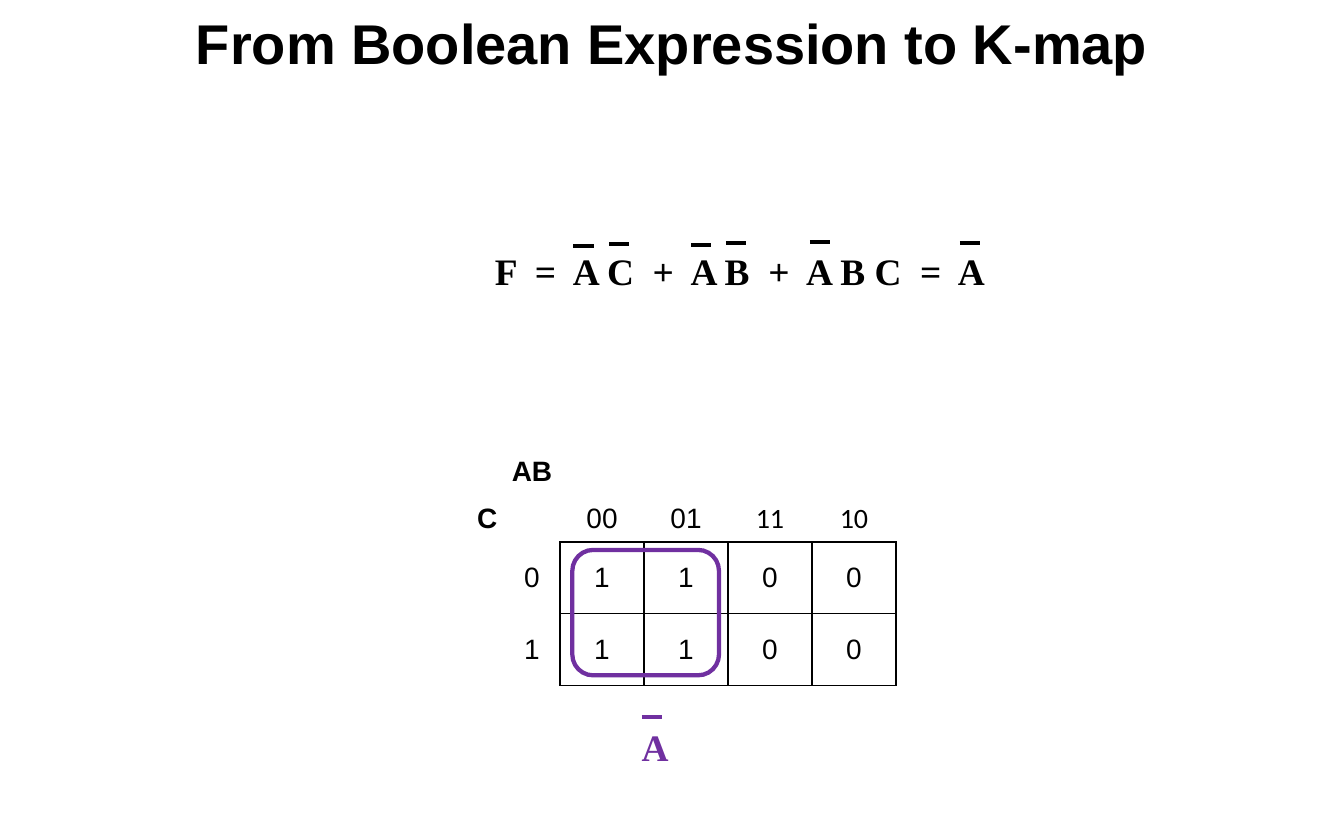
import lxml.etree
import pptx
import pptx.dml.color
import pptx.enum.shapes
import pptx.enum.text
import pptx.oxml
import pptx.oxml.ns
import pptx.util

Inches, Pt = pptx.util.Inches, pptx.util.Pt
RGB = pptx.dml.color.RGBColor.from_string
ALIGN, ANCHOR = pptx.enum.text.PP_ALIGN, pptx.enum.text.MSO_ANCHOR
COLORS = {"ink": "000000", "paper": "FFFFFF", "loop": "7030A0"}
qn = pptx.oxml.ns.qn


def write(frame, text, size, font="Arial", color="ink", bold=False, align=ALIGN.CENTER):
    para = frame.paragraphs[0]
    para.alignment = align
    run = para.add_run()
    run.text = text
    run.font.size, run.font.name, run.font.bold = Pt(size), font, bold
    run.font.color.rgb = RGB(COLORS[color])


def bar(shapes, left, top, color="ink"):
    """Draw the overline that negates a letter."""
    line = shapes.add_connector(
        pptx.enum.shapes.MSO_CONNECTOR.STRAIGHT,
        Inches(left), Inches(top), Inches(left + 0.18), Inches(top))
    line.line.color.rgb = RGB(COLORS[color])
    line.line.width = Pt(2.5)
    lxml.etree.SubElement(line._element.spPr, qn("a:effectLst"))


deck = pptx.Presentation()
deck.slide_width, deck.slide_height = Inches(12), Inches(7.5)
slide = deck.slides.add_slide(deck.slide_layouts[6])

# Title
title = slide.shapes.add_textbox(Inches(1), 0, Inches(10), Inches(0.75)).text_frame
title.word_wrap = True
title.vertical_anchor = ANCHOR.MIDDLE
write(title, "From Boolean Expression to K-map", 36, bold=True)

# Karnaugh map: two rows and two columns of labels around the values
GRID = [
    ["", "AB", "", "", "", ""],
    ["C", "", "00", "01", "11", "10"],
    ["", "0", "1", "1", "0", "0"],
    ["", "1", "1", "1", "0", "0"],
]
WIDTHS = [0.5] * 2 + [0.75] * 4
HEIGHTS = [0.42] * 2 + [0.64] * 2
HEAD = 2
frame = slide.shapes.add_table(
    len(HEIGHTS), len(WIDTHS), Inches(4), Inches(4),
    Inches(sum(WIDTHS)), Inches(sum(HEIGHTS)))
table = frame.table
table.first_row = table.horz_banding = False
for col, width in zip(table.columns, WIDTHS):
    col.width = Inches(width)
for row, height in zip(table.rows, HEIGHTS):
    row.height = Inches(height)

SIDES = {"L": (0, -1), "R": (0, 1), "T": (-1, 0), "B": (1, 0)}
for r, texts in enumerate(GRID):
    for c, text in enumerate(texts):
        cell = table.cell(r, c)
        cell.margin_left = cell.margin_right = cell.margin_top = cell.margin_bottom = 0
        cell.vertical_anchor = ANCHOR.MIDDLE
        props = cell._tc.get_or_add_tcPr()
        for side, (down, right) in SIDES.items():
            # An edge is black when a value cell lies on either side of it
            inked = min(r, c) >= HEAD or min(r + down, c + right) >= HEAD
            edge = lxml.etree.SubElement(props, qn(f"a:ln{side}"), w=str(Pt(1)))
            fill = lxml.etree.SubElement(edge, qn("a:solidFill"))
            lxml.etree.SubElement(fill, qn("a:srgbClr"),
                                  val=COLORS["ink" if inked else "paper"])
        cell.fill.solid()
        cell.fill.fore_color.rgb = RGB(COLORS["paper"])
        if text:
            font = "Calibri" if text in ("11", "10") else "Arial"
            write(cell.text_frame, text, 18, font, bold=text.isalpha())
table.cell(1, 0).margin_left = Inches(0.2)

# Expression and the term it reduces to, each with its overlines
TERMS = [
    ("F  =  A C  +  A B  +  A B C  =  A", "ink", (4.32, 2.17, 4.62),
     [(5.12, 2.2), (5.44, 2.18), (6.17, 2.19), (6.48, 2.17), (7.23, 2.16), (8.57, 2.17)]),
    ("A", "loop", (5.63, 6.42, 0.45), [(5.73, 6.4)]),
]
for text, color, (left, top, width), bars in TERMS:
    group = slide.shapes.add_group_shape().shapes
    box = group.add_textbox(Inches(left), Inches(top), Inches(width), Inches(0.5))
    box.text_frame.word_wrap = False
    write(box.text_frame, text, 24, "Times New Roman", color, True, ALIGN.LEFT)
    for x, y in bars:
        bar(group, x, y, color)

# Loop around the four ones
loop = slide.shapes.add_shape(
    pptx.enum.shapes.MSO_SHAPE.ROUNDED_RECTANGLE,
    Inches(5.11), Inches(4.91), Inches(1.31), Inches(1.12))
loop.shadow.inherit = False
loop.fill.background()
loop.line.color.rgb = RGB(COLORS["loop"])
loop.line.width = Pt(2.75)

deck.save("out.pptx")
